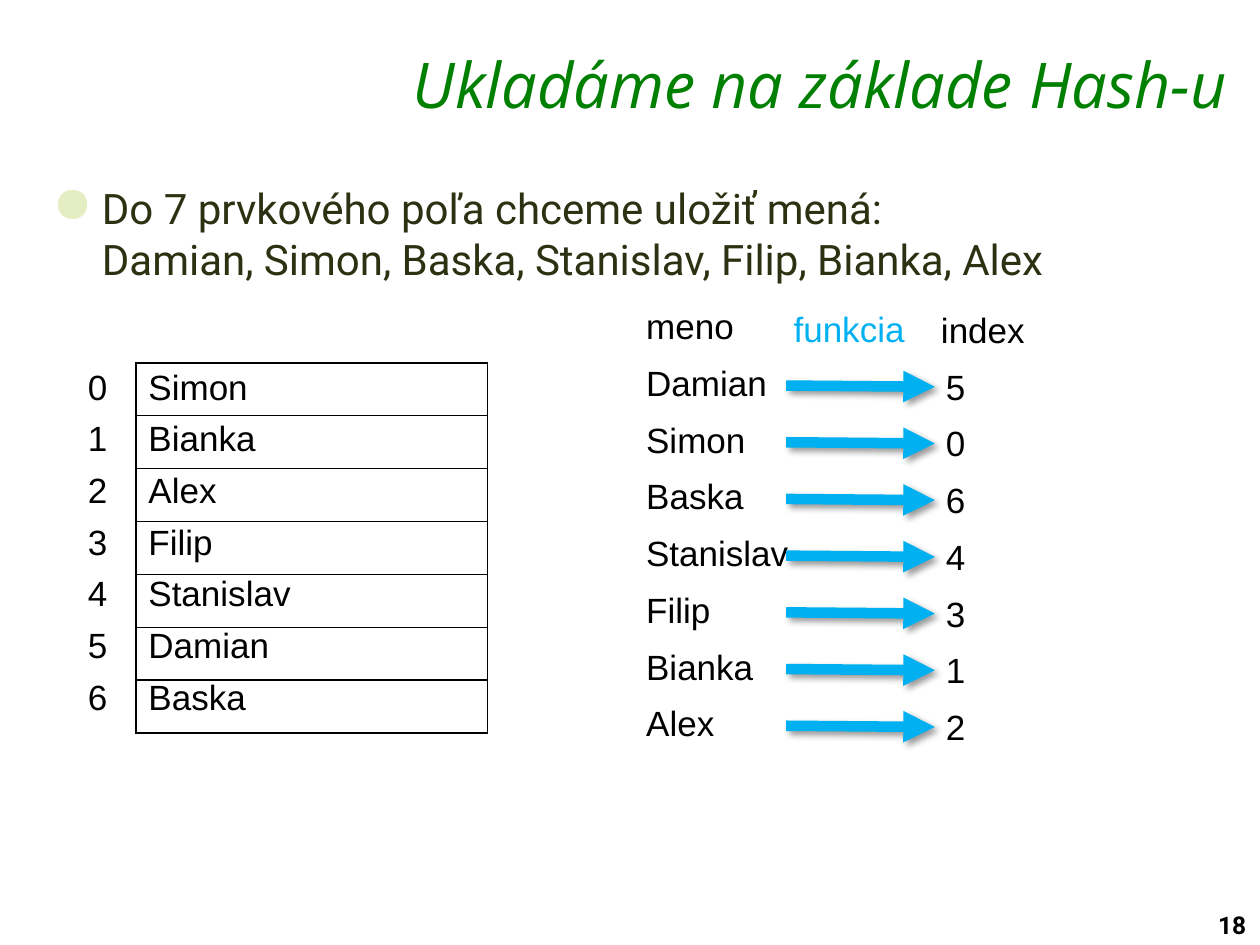
from dataclasses import dataclass

import pptx
import pptx.dml.color
import pptx.enum.shapes
import pptx.enum.text
import pptx.oxml
import pptx.oxml.ns
import pptx.util
from pptx.util import Inches


@dataclass(frozen=True)
class Theme:
    title_color: str = "008000"
    body_color: str = "2B3212"
    bullet_color: str = "E5EEC2"
    accent: str = "00B0F0"
    black: str = "000000"
    white: str = "FFFFFF"
    title_font: str = "Open Sans"
    body_font: str = "Roboto"
    label_font: str = "Arial"
    title_size: int = 36
    body_size: int = 24
    label_size: int = 20
    number_size: int = 14


THEME = Theme()

# Name, its hash index and the width of its label in inches
ENTRIES = [
    ("Damian", 5, 1.17),
    ("Simon", 0, 1.0),
    ("Baska", 6, 0.98),
    ("Stanislav", 4, 1.34),
    ("Filip", 3, 0.72),
    ("Bianka", 1, 1.06),
    ("Alex", 2, 0.75),
]
LABEL_HEIGHT = Inches(0.44)
DIGIT_WIDTH = Inches(0.36)


def rgb(color):
    return pptx.dml.color.RGBColor.from_string(color)


def xml(markup):
    namespace = pptx.oxml.ns.nsdecls("a")
    return pptx.oxml.parse_xml(markup.replace(">", f" {namespace}>", 1))


def add_text(slide, box, text, font, size, color, wrap=False, bold=False, italic=False):
    """Add a one-paragraph text box and return its paragraph."""
    shape = slide.shapes.add_textbox(*box)
    frame = shape.text_frame
    frame.word_wrap = wrap
    frame.text = text
    paragraph = frame.paragraphs[0]
    for run in paragraph.runs:
        run.font.name = font
        run.font.size = pptx.util.Pt(size)
        run.font.color.rgb = rgb(color)
        run.font.bold = bold
        run.font.italic = italic
    return paragraph


def add_label(slide, left, top, width, text, color=THEME.black):
    add_text(slide, (left, top, width, LABEL_HEIGHT), text,
             THEME.label_font, THEME.label_size, color)


def add_title(slide, box):
    paragraph = add_text(slide, box, "Ukladáme na základe Hash-u", THEME.title_font,
                         THEME.title_size, THEME.title_color, wrap=True, italic=True)
    paragraph.alignment = pptx.enum.text.PP_ALIGN.RIGHT


def add_body(slide, box):
    text = ("Do 7 prvkového poľa chceme uložiť mená:\v"
            "Damian, Simon, Baska, Stanislav, Filip, Bianka, Alex")
    paragraph = add_text(slide, box, text, THEME.body_font,
                         THEME.body_size, THEME.body_color, wrap=True)
    properties = paragraph._p.get_or_add_pPr()
    properties.set("marL", str(Inches(0.39)))
    properties.set("indent", str(Inches(-0.39)))
    properties.append(xml(f'<a:buClr><a:srgbClr val="{THEME.bullet_color}"/></a:buClr>'))
    properties.append(xml('<a:buSzPct val="120000"></a:buSzPct>'))
    properties.append(xml('<a:buChar char="●"></a:buChar>'))


def set_borders(cell):
    properties = cell._tc.get_or_add_tcPr()
    for position, side in enumerate(("lnL", "lnR", "lnT", "lnB")):
        border = xml(f'<a:{side} w="12700"><a:solidFill>'
                     f'<a:srgbClr val="{THEME.black}"/></a:solidFill></a:{side}>')
        properties.insert(position, border)


def add_array(slide, left, top, width):
    """Draw the array cells with their indexes on the left and the stored names."""
    row_height, pitch = Inches(0.42), Inches(0.41)
    count = len(ENTRIES)
    table = slide.shapes.add_table(count, 1, left, top, width, row_height * count).table
    table.first_row = False
    table.horz_banding = False
    for row in table.rows:
        row.height = row_height
        cell = row.cells[0]
        cell.fill.solid()
        cell.fill.fore_color.rgb = rgb(THEME.white)
        set_borders(cell)
    for name, index, name_width in sorted(ENTRIES, key=lambda entry: entry[1]):
        label_top = top - Inches(0.03) + pitch * index
        add_label(slide, left - Inches(0.48), label_top, DIGIT_WIDTH, str(index))
        add_label(slide, left, label_top, Inches(name_width), name)


def add_arrow(slide, left, top, width):
    arrow = slide.shapes.add_connector(
        pptx.enum.shapes.MSO_CONNECTOR.STRAIGHT,
        left, top, left + width, top + Inches(0.01))
    arrow.line.color.rgb = rgb(THEME.accent)
    arrow.line.width = pptx.util.Pt(6)
    arrow.line._get_or_add_ln().append(xml('<a:tailEnd type="triangle"></a:tailEnd>'))
    arrow._element.spPr.append(xml(
        '<a:effectLst><a:outerShdw blurRad="50800" dist="38100" dir="2700000">'
        f'<a:srgbClr val="{THEME.black}"><a:alpha val="40000"/></a:srgbClr>'
        '</a:outerShdw></a:effectLst>'))


def add_mapping(slide, left, top):
    """Draw the headings and one row of name, arrow and index per entry."""
    pitch = Inches(0.45)
    add_label(slide, left, top, Inches(0.9), "meno")
    add_label(slide, left + Inches(1.17), top + Inches(0.02), Inches(1.09),
              "funkcia", THEME.accent)
    add_label(slide, left + Inches(2.34), top + Inches(0.03), Inches(0.87), "index")
    for position, (name, index, name_width) in enumerate(ENTRIES):
        row_top = top + pitch * (position + 1)
        add_label(slide, left, row_top, Inches(name_width), name)
        add_arrow(slide, left + Inches(1.21), row_top + Inches(0.24), Inches(1.18))
        add_label(slide, left + Inches(2.38), row_top + Inches(0.03),
                  DIGIT_WIDTH, str(index))


def add_slide_number(slide, box):
    add_text(slide, box, "18", THEME.body_font, THEME.number_size, THEME.black, bold=True)


def main():
    presentation = pptx.Presentation()
    presentation.slide_width = Inches(10)
    presentation.slide_height = Inches(7.5)
    slide = presentation.slides.add_slide(presentation.slide_layouts[6])
    add_slide_number(slide, (Inches(9.57), Inches(7.17), Inches(0.43), Inches(0.33)))
    add_title(slide, (Inches(2.29), Inches(0.31), Inches(7.55), Inches(0.58)))
    add_body(slide, (Inches(0.32), Inches(1.4), Inches(9.38), Inches(1.25)))
    add_array(slide, Inches(1.08), Inches(2.88), Inches(2.79))
    add_mapping(slide, Inches(5.03), Inches(2.37))
    presentation.save("out.pptx")


if __name__ == "__main__":
    main()
